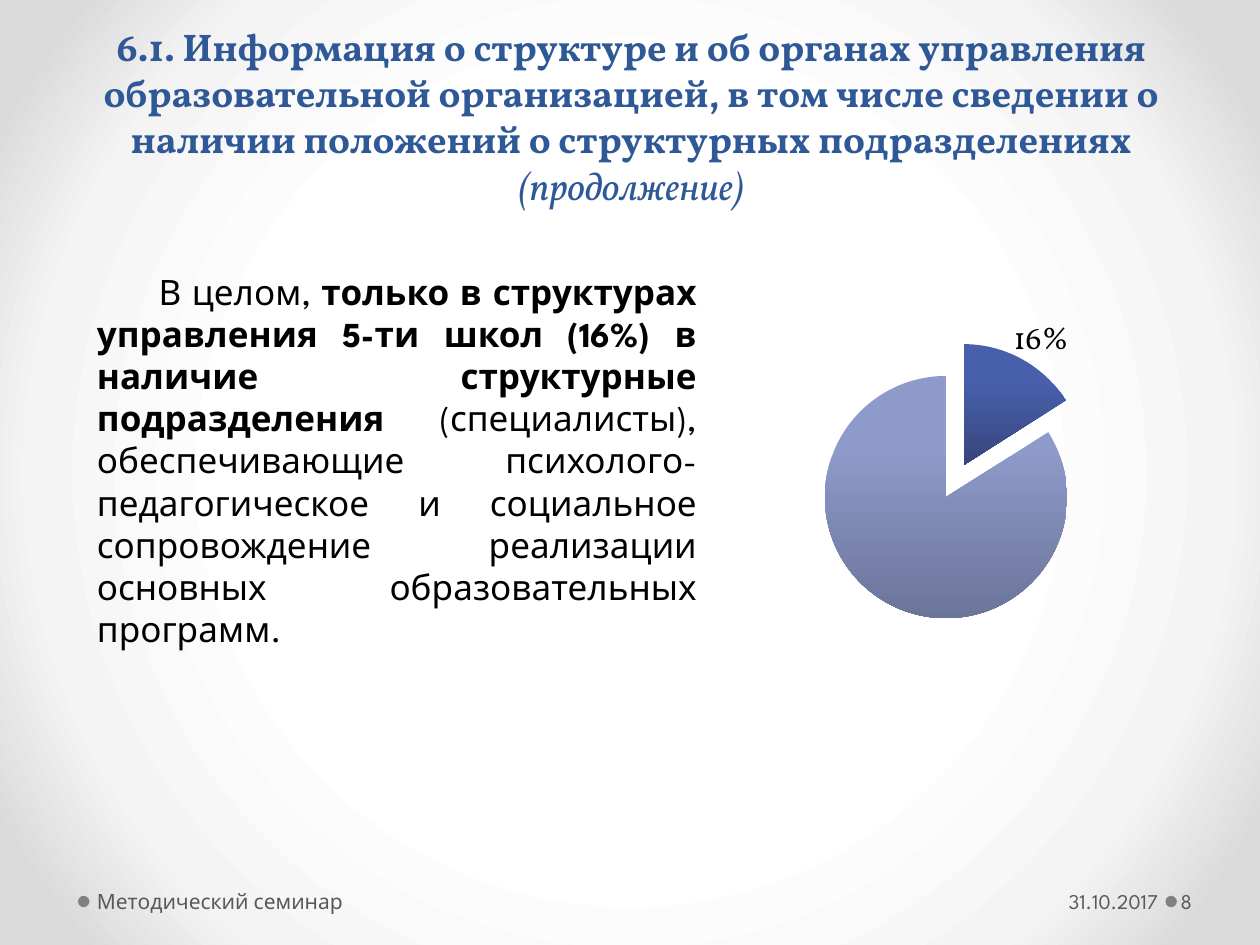
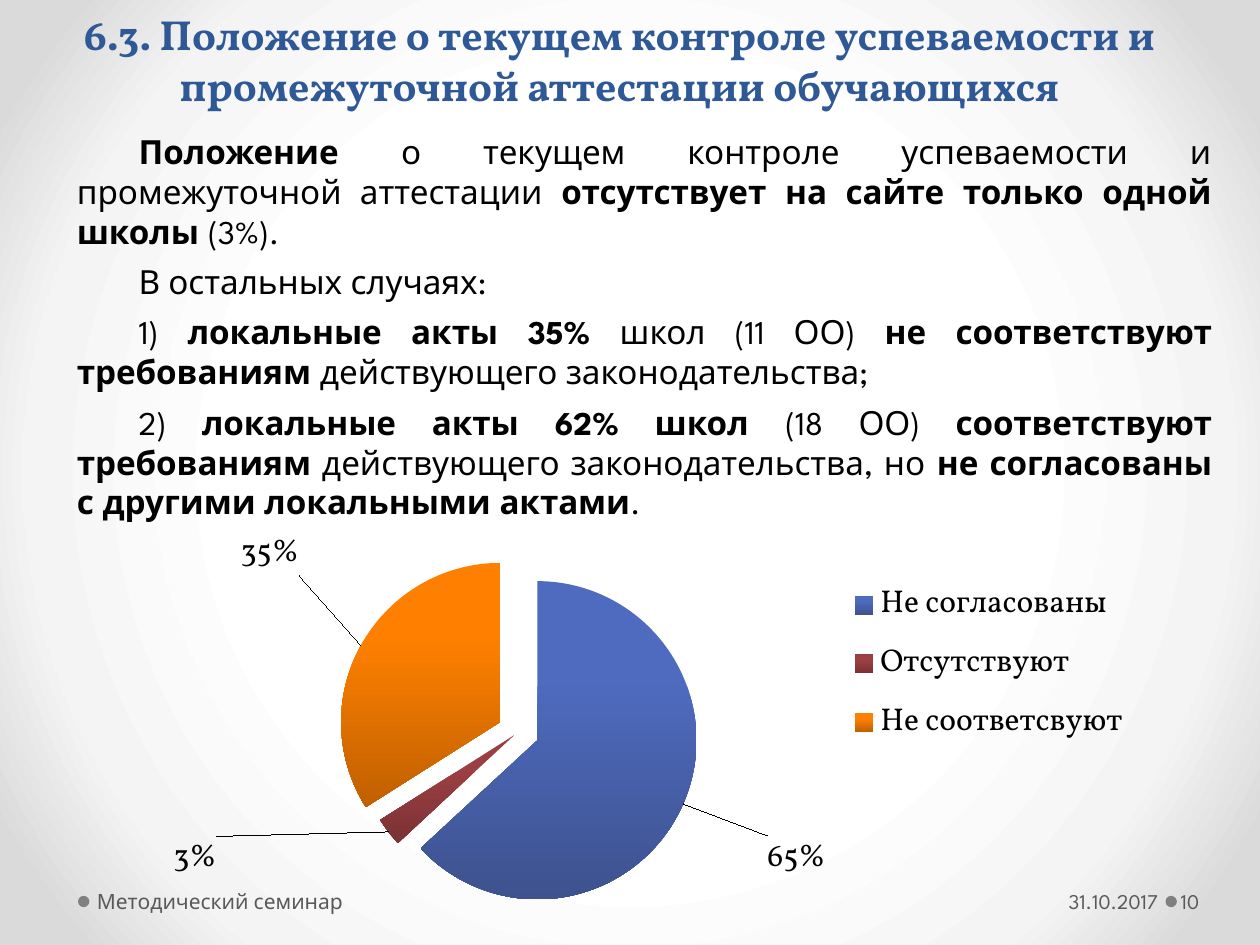
from dataclasses import dataclass
from typing import Any, NamedTuple

import pptx
import pptx.chart.data
import pptx.dml.color
import pptx.enum.chart
import pptx.enum.shapes
import pptx.enum.text
import pptx.oxml
import pptx.oxml.ns
import pptx.util

Pt = pptx.util.Pt
Align = pptx.enum.text.PP_ALIGN
Anchor = pptx.enum.text.MSO_ANCHOR

HEADING_FONT = "Vollkorn"
TEXT_FONT = "League Spartan"
HEADING_COLOR = "2F5897"
TEXT_COLOR = "000000"
FOOTER_COLOR = "595959"
DOT_COLOR = "808080"
BACKGROUND_STOPS = ((50, "FFFFFF"), (76, "F4F4F4"), (92, "DADADA"))
LINE_FACTOR = 1.2
FIRST_LINE_INDENT = 35.3


class Box(NamedTuple):
    left: float
    top: float
    width: float
    height: float


class Span(NamedTuple):
    text: str
    bold: bool = False
    italic: bool = False


@dataclass
class TextBlock:
    box: Box
    size: float
    paragraphs: list[list[Span]]


@dataclass
class Slice:
    category: str
    share: float
    top_color: str
    bottom_color: str
    explosion: int
    label_shift: tuple[float, float] | None = None


@dataclass
class Pie:
    box: Box
    plot: Box
    slices: list[Slice]
    legend: Box | None = None


@dataclass
class Page:
    number: str
    title: TextBlock
    body: TextBlock
    pie: Pie


class FooterItem(NamedTuple):
    box: Box
    align: Any
    left_inset: float
    right_inset: float


FOOTER_DATE = FooterItem(Box(501.1, 500.4, 164.2, 28.8), Align.RIGHT, 7.2, 3.6)
FOOTER_EVENT = FooterItem(Box(51.8, 500.4, 223.9, 28.8), Align.LEFT, 3.6, 7.2)
FOOTER_NUMBER = FooterItem(Box(672.5, 500.4, 43.9, 28.8), Align.LEFT, 2.2, 3.6)
FOOTER_DOTS = [Box(left, 511.9, 6.5, 6.5) for left in (44.6, 666)]

PAGES = [
    Page(
        "8",
        TextBlock(Box(36.7, 37.4, 648, 85), 22, [[
            Span("6.1. Информация о структуре и об органах управления образовательной "
                 "организацией, в том числе сведении о наличии положений о структурных "
                 "подразделениях ", bold=True),
            Span("(продолжение)", italic=True)]]),
        TextBlock(Box(48.2, 151.2, 357.1, 193.7), 20, [[
            Span("В целом, "),
            Span("только в структурах управления 5-ти школ (16%) в наличие структурные "
                 "подразделения", True),
            Span(" (специалисты), обеспечивающие психолого-педагогическое и социальное "
                 "сопровождение реализации основных образовательных программ.")]]),
        Pie(Box(385.2, 151.2, 337.7, 215.3), Box(0.27, 0.25, 0.41, 0.65), [
            Slice("1", 0.16, "4860AC", "36457C", 15, (-0.02, 0.03)),
            Slice("", 0.84, "8E9AC9", "6B7499", 15)]),
    ),
    Page(
        "10",
        TextBlock(Box(15.8, 9.4, 676.1, 56.9), 24, [[
            Span("6.3. Положение о текущем контроле успеваемости и промежуточной "
                 "аттестации обучающихся", bold=True)]]),
        TextBlock(Box(36.7, 71.3, 663.1, 232.6), 19, [
            [Span("Положение ", True),
             Span("о текущем контроле успеваемости и промежуточной аттестации "),
             Span("отсутствует на сайте только одной школы ", True),
             Span("(3%).")],
            [Span("В остальных случаях:")],
            [Span("1) "),
             Span("локальные акты 35% ", True),
             Span("школ (11 ОО) "),
             Span("не соответствуют требованиям ", True),
             Span("действующего законодательства;")],
            [Span("2) "),
             Span("локальные акты 62% школ ", True),
             Span("(18 ОО) "),
             Span("соответствуют требованиям", True),
             Span(" действующего законодательства, но "),
             Span("не согласованы с другими локальными актами", True),
             Span(".")]]),
        Pie(Box(65.5, 303.8, 632.2, 236.2), Box(0.22, 0.1, 0.29, 0.77), [
            Slice("Не согласованы", 0.65, "4F6BBF", "3D528E", 13, (0.07, 0.07)),
            Slice("Отсутствуют", 0.03, "9C3F42", "7A3235", 3, (-0.15, 0)),
            Slice("Не соответсвуют", 0.35, "FF8000", "C06000", 13, (-0.05, -0.16))],
            legend=Box(0.66, 0.09, 0.26, 0.46)),
    ),
]


def rgb(color: str) -> pptx.dml.color.RGBColor:
    return pptx.dml.color.RGBColor.from_string(color)


def points(box: Box) -> list[int]:
    return [Pt(length) for length in box]


def style_font(font: Any, name: str, size: float, color: str) -> None:
    font.name, font.size = name, Pt(size)
    font.color.rgb = rgb(color)


def paint_background(master: Any) -> None:
    master.background.fill.solid()
    solid = master.element.xpath(".//p:bgPr/a:solidFill")[0]
    stops = "".join(
        f'<a:gs pos="{position * 1000}"><a:srgbClr val="{color}"/></a:gs>'
        for position, color in BACKGROUND_STOPS)
    gradient = pptx.oxml.parse_xml(
        f'<a:gradFill {pptx.oxml.ns.nsdecls("a")} rotWithShape="1"><a:gsLst>{stops}</a:gsLst>'
        '<a:path path="circle"><a:fillToRect l="50000" t="50000" r="50000" b="50000"/>'
        '</a:path></a:gradFill>')
    solid.getparent().replace(solid, gradient)


def fill_placeholder(placeholder: Any, block: TextBlock, font: str, color: str,
                     align: Any, anchor: Any, space_after: float) -> None:
    (placeholder.left, placeholder.top,
     placeholder.width, placeholder.height) = points(block.box)
    frame = placeholder.text_frame
    frame.auto_size = pptx.enum.text.MSO_AUTO_SIZE.NONE
    frame.word_wrap = True
    frame.vertical_anchor = anchor
    for index, spans in enumerate(block.paragraphs):
        paragraph = frame.add_paragraph() if index else frame.paragraphs[0]
        paragraph.alignment = align
        paragraph.line_spacing = Pt(block.size * LINE_FACTOR)
        paragraph.space_before, paragraph.space_after = Pt(0), Pt(space_after)
        for span in spans:
            run = paragraph.add_run()
            run.text = span.text
            style_font(run.font, font, block.size, color)
            run.font.bold, run.font.italic = span.bold, span.italic


def indent_first_lines(placeholder: Any) -> None:
    for paragraph in placeholder.text_frame.paragraphs:
        properties = paragraph._p.get_or_add_pPr()
        properties.set("marL", "0")
        properties.set("indent", str(Pt(FIRST_LINE_INDENT)))
        properties.append(pptx.oxml.parse_xml(f'<a:buNone {pptx.oxml.ns.nsdecls("a")}/>'))


def manual_layout(box: Box) -> Any:
    values = "".join(f'<c:{tag} val="{value}"/>' for tag, value in zip("xywh", box))
    return pptx.oxml.parse_xml(
        f'<c:layout {pptx.oxml.ns.nsdecls("c")}><c:manualLayout>'
        '<c:xMode val="edge"/><c:yMode val="edge"/>'
        f'{values}</c:manualLayout></c:layout>')


def place_label(point: Any, series: Any, index: int, shift: tuple[float, float]) -> None:
    point.data_label.position = pptx.enum.chart.XL_LABEL_POSITION.OUTSIDE_END
    label_index = series._element.xpath(f'c:dLbls/c:dLbl/c:idx[@val="{index}"]')[0]
    namespace = pptx.oxml.ns.nsdecls("c")
    number_format = pptx.oxml.parse_xml(
        f'<c:numFmt {namespace} formatCode="0%" sourceLinked="0"/>')
    layout = pptx.oxml.parse_xml(
        f'<c:layout {namespace}><c:manualLayout>'
        f'<c:x val="{shift[0]}"/><c:y val="{shift[1]}"/></c:manualLayout></c:layout>')
    label_index.addnext(number_format)
    label_index.addnext(layout)


def draw_pie(slide: Any, pie: Pie) -> None:
    data = pptx.chart.data.CategoryChartData(number_format="0%")
    data.categories = [part.category for part in pie.slices]
    data.add_series("Series 1", [part.share for part in pie.slices])
    chart = slide.shapes.add_chart(
        pptx.enum.chart.XL_CHART_TYPE.PIE, *points(pie.box), data).chart
    chart.has_title = False
    style_font(chart.font, HEADING_FONT, 18, TEXT_COLOR)
    chart.plots[0].vary_by_categories = True
    series = chart.plots[0].series[0]
    labels = series.data_labels
    labels.number_format, labels.number_format_is_linked = "0%", False
    labels.show_value = False

    for index, part in enumerate(pie.slices):
        point = series.points[index]
        fill = point.format.fill
        fill.gradient()
        fill.gradient_angle = 270
        for stop, color, position in zip(
                fill.gradient_stops, (part.top_color, part.bottom_color), (0.3, 1)):
            stop.color.rgb, stop.position = rgb(color), position
        shape_properties = series._element.xpath(
            f'c:dPt[c:idx/@val="{index}"]/c:spPr')[0]
        shape_properties.addprevious(pptx.oxml.parse_xml(
            f'<c:explosion {pptx.oxml.ns.nsdecls("c")} val="{part.explosion}"/>'))
        if part.label_shift:
            place_label(point, series, index, part.label_shift)

    plot_area = chart._chartSpace.xpath("c:chart/c:plotArea")[0]
    for automatic in plot_area.xpath("c:layout"):
        plot_area.remove(automatic)
    layout = manual_layout(pie.plot)
    layout[0].insert(0, pptx.oxml.parse_xml(
        f'<c:layoutTarget {pptx.oxml.ns.nsdecls("c")} val="inner"/>'))
    plot_area.insert(0, layout)

    chart.has_legend = pie.legend is not None
    if pie.legend:
        chart.legend.position = pptx.enum.chart.XL_LEGEND_POSITION.RIGHT
        chart.legend.include_in_layout = False
        legend = chart.legend._element
        for automatic in legend.xpath("c:layout"):
            legend.remove(automatic)
        legend.xpath("c:legendPos")[0].addnext(manual_layout(pie.legend))


def draw_footer_item(slide: Any, item: FooterItem, text: str) -> None:
    frame = slide.shapes.add_textbox(*points(item.box)).text_frame
    frame.word_wrap = True
    frame.vertical_anchor = Anchor.MIDDLE
    frame.margin_left, frame.margin_right = Pt(item.left_inset), Pt(item.right_inset)
    frame.text = text
    paragraph = frame.paragraphs[0]
    paragraph.alignment = item.align
    style_font(paragraph.runs[0].font, TEXT_FONT, 12, FOOTER_COLOR)


def draw_footer(slide: Any, number: str) -> None:
    for box in FOOTER_DOTS:
        dot = slide.shapes.add_shape(pptx.enum.shapes.MSO_SHAPE.OVAL, *points(box))
        dot.shadow.inherit = False
        dot.fill.solid()
        dot.fill.fore_color.rgb = rgb(DOT_COLOR)
        dot.line.fill.background()
    draw_footer_item(slide, FOOTER_DATE, "31.10.2017")
    draw_footer_item(slide, FOOTER_EVENT, "Методический семинар")
    draw_footer_item(slide, FOOTER_NUMBER, number)


def main() -> None:
    seminar = pptx.Presentation()
    seminar.slide_width, seminar.slide_height = Pt(720), Pt(540)
    paint_background(seminar.slide_master)
    for page in PAGES:
        slide = seminar.slides.add_slide(seminar.slide_layouts[1])
        body = slide.placeholders[1]
        fill_placeholder(slide.shapes.title, page.title, HEADING_FONT, HEADING_COLOR,
                         Align.CENTER, Anchor.BOTTOM, 0)
        fill_placeholder(body, page.body, TEXT_FONT, TEXT_COLOR,
                         Align.JUSTIFY, Anchor.TOP, 6)
        indent_first_lines(body)
        draw_pie(slide, page.pie)
        draw_footer(slide, page.number)
    seminar.save("out.pptx")


if __name__ == "__main__":
    main()
